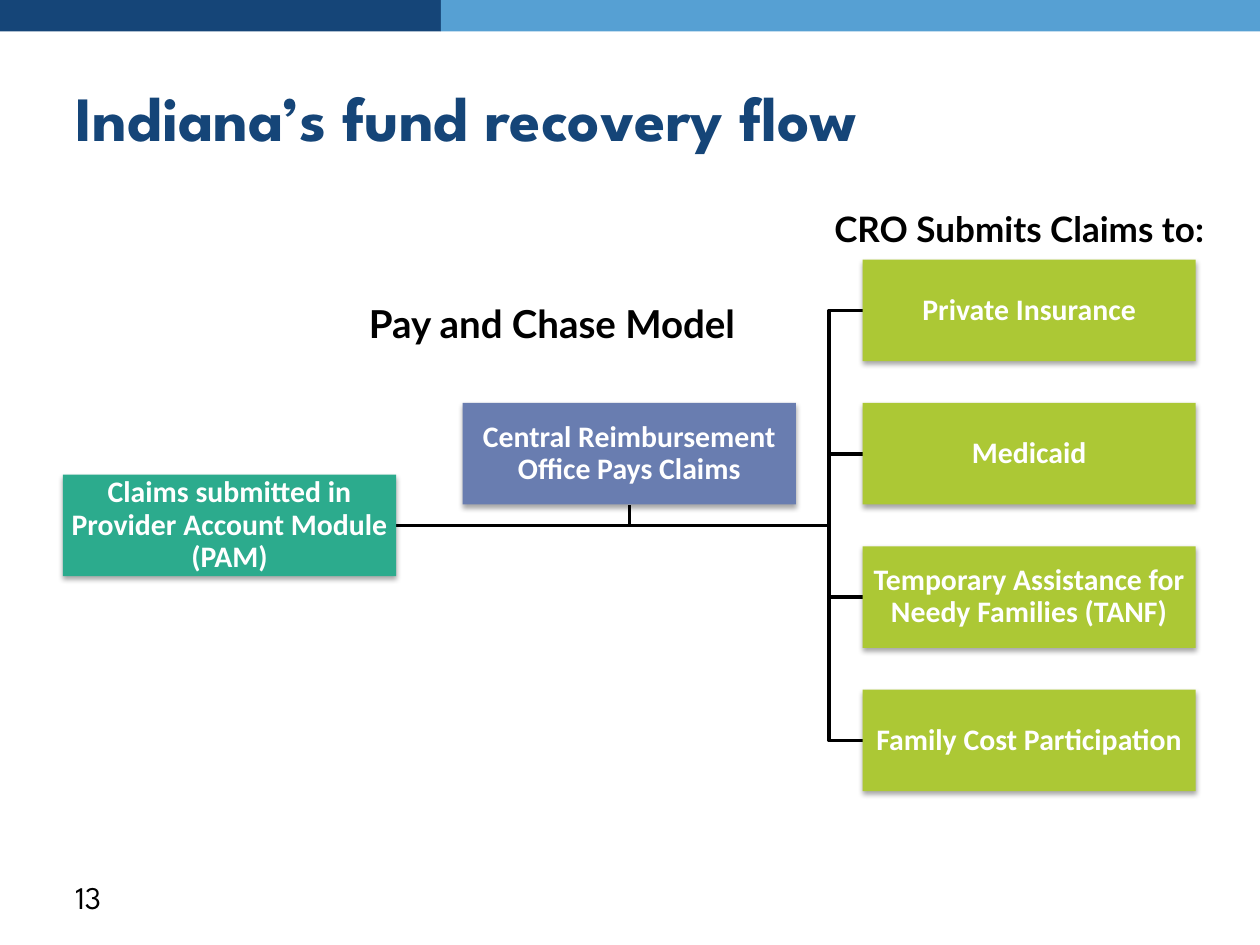
from lxml.etree import SubElement
from pptx import Presentation
from pptx.dml.color import RGBColor
from pptx.enum.shapes import MSO_SHAPE as SHAPE
from pptx.enum.text import MSO_ANCHOR as ANCHOR, PP_ALIGN as ALIGN
from pptx.oxml.ns import qn
from pptx.util import Inches, Pt

WIDTH, HEIGHT = 10, 7.5
NAVY, SKY, TEAL, SLATE, LIME = "154578", "56A0D3", "2CAB8D", "697DB0", "ACC835"
BLACK, WHITE = "000000", "FFFFFF"
COLUMNS, PAYER_ROWS = 3, 4
COLUMN_GAP, ROW_GAP = 0.2, 0.41
PAYERS = [
    "Private Insurance",
    "Medicaid",
    "Temporary Assistance for Needy Families (TANF)",
    "Family Cost Participation",
]


def rgb(color):
    """Turn a hex string into a colour."""
    return RGBColor.from_string(color)


def inches(box):
    """Convert a box or point given in inches to lengths."""
    return [Inches(value) for value in box]


def add_rect(s, box, color):
    """Add a plain filled rectangle."""
    sp = s.shapes.add_shape(SHAPE.RECTANGLE, *inches(box))
    sp.shadow.inherit = False
    sp.fill.solid()
    sp.fill.fore_color.rgb = rgb(color)
    sp.line.fill.background()
    return sp


def write(sp, text, font, size, color, bold=True, align=ALIGN.LEFT, anchor=ANCHOR.MIDDLE):
    """Put one formatted paragraph into a shape."""
    tf = sp.text_frame
    tf.word_wrap = True
    tf.vertical_anchor = anchor
    p = tf.paragraphs[0]
    p.text, p.alignment = text, align
    p.font.name, p.font.size, p.font.bold = font, Pt(size), bold
    p.font.color.rgb = rgb(color)
    return p


def add_shadow(sp):
    """Give a shape a soft shadow straight below it."""
    effects = sp._element.spPr.find(qn("a:effectLst"))
    shadow = SubElement(effects, qn("a:outerShdw"), blurRad=str(Pt(3.1)),
                        dist=str(Pt(1.8)), dir="5400000", rotWithShape="0")
    color = SubElement(shadow, qn("a:srgbClr"), val=BLACK)
    SubElement(color, qn("a:alpha"), val="35000")


def add_banner(s, box):
    """Draw the two-colour band across the box."""
    left, top, width, height = box
    split = 0.35 * width
    add_rect(s, (left, top, split, height), NAVY)
    add_rect(s, (left + split, top, width - split, height), SKY)


def add_title(s, box, text):
    """Place and format the title placeholder."""
    sp = s.shapes.title
    sp.left, sp.top, sp.width, sp.height = inches(box)
    write(sp, text, "League Spartan", 36, NAVY)


def add_label(s, box, text, font, size, **style):
    """Add a black line of text."""
    write(s.shapes.add_textbox(*inches(box)), text, font, size, BLACK, **style)


def add_step(s, box, text, color):
    """Add one shadowed box of the flow."""
    sp = add_rect(s, box, color)
    add_shadow(sp)
    tf = sp.text_frame
    tf.margin_left = tf.margin_right = tf.margin_top = tf.margin_bottom = Inches(0.01)
    p = write(sp, text, "Calibri", 17, WHITE, align=ALIGN.CENTER)
    p.line_spacing = 0.9


def add_branch(s, points):
    """Draw an open bent line through the points."""
    start, *rest = [inches(point) for point in points]
    builder = s.shapes.build_freeform(*start, scale=1.0)
    builder.add_line_segments(rest, close=False)
    sp = builder.convert_to_shape()
    sp.shadow.inherit = False
    sp.fill.background()
    sp.line.color.rgb = rgb(BLACK)
    sp.line.width = Pt(2)


def add_flow(s, box):
    """Lay out the steps and their branches on a grid filling the box."""
    left, top, width, height = box
    w = width / (COLUMNS + (COLUMNS - 1) * COLUMN_GAP)
    h = height / (PAYER_ROWS + (PAYER_ROWS - 1) * ROW_GAP)

    def cell(column, row):
        return left + column * w * (1 + COLUMN_GAP), top + row * h * (1 + ROW_GAP), w, h

    claims, office = cell(0, 1.5), cell(1, 1)
    payers = [cell(2, row) for row in range(PAYER_ROWS)]
    root = claims[0] + w, claims[1] + h / 2
    trunk = payers[0][0] - w * COLUMN_GAP / 2
    center = office[0] + w / 2

    add_branch(s, [root, (center, root[1]), (center, office[1] + h)])
    for x, y, *_ in payers:
        middle = y + h / 2
        add_branch(s, [root, (trunk, root[1]), (trunk, middle), (x, middle)])

    add_step(s, claims, "Claims submitted in Provider Account Module (PAM)", TEAL)
    for payer, name in zip(payers, PAYERS):
        add_step(s, payer, name, LIME)
    add_step(s, office, "Central Reimbursement Office Pays Claims", SLATE)


def main():
    """Build the slide and save it."""
    prs = Presentation()
    prs.slide_width, prs.slide_height = inches((WIDTH, HEIGHT))
    s = prs.slides.add_slide(prs.slide_layouts[5])
    margin = 0.05 * WIDTH
    add_banner(s, (0, 0, WIDTH, HEIGHT / 30))
    add_title(s, (margin, 0.3, WIDTH - 2 * margin, 1.25), "Indiana’s fund recovery flow")
    add_label(s, (margin, 6.92, 2.33, 0.4), "13", "League Spartan", 18, bold=False)
    add_flow(s, (margin, 2.06, 8.99, 4.22))
    add_label(s, (2.83, 2.33, 3.42, 0.47), "Pay and Chase Model", "Lato", 22, anchor=ANCHOR.TOP)
    add_label(s, (6.38, 1.6, 3.42, 0.44), "CRO Submits Claims to:", "Lato", 20,
              align=ALIGN.CENTER, anchor=ANCHOR.TOP)
    prs.save("out.pptx")


if __name__ == "__main__":
    main()
